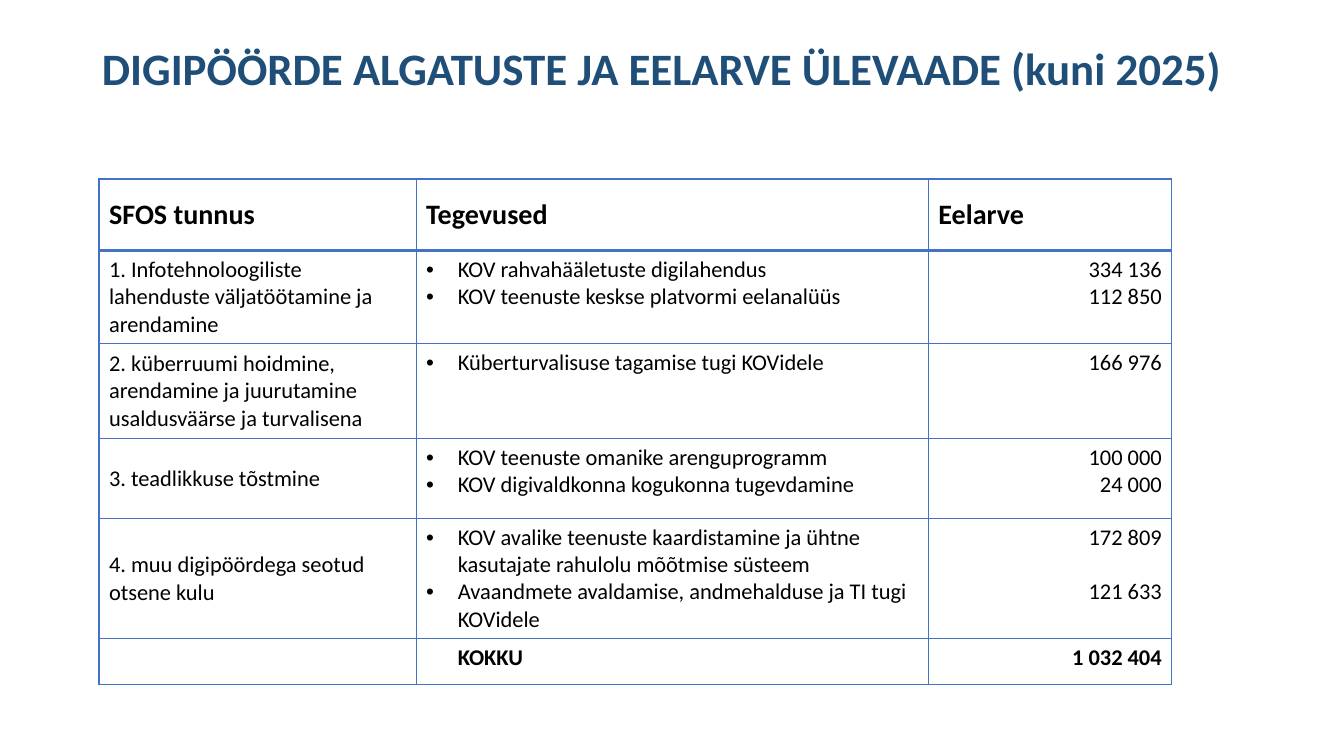
from lxml import etree
from pptx import Presentation
from pptx.dml.color import RGBColor
from pptx.enum.text import MSO_ANCHOR, PP_ALIGN
from pptx.oxml.ns import qn
from pptx.util import Pt

MIDDLE, TOP = MSO_ANCHOR.MIDDLE, MSO_ANCHOR.TOP
LEFT, RIGHT = PP_ALIGN.LEFT, PP_ALIGN.RIGHT

COLOURS = {"title": "1F4E79", "text": "000000", "border": "4472C4"}
COLUMN_WIDTHS = [226, 365, 173.5]
ROW_HEIGHTS = [51, 66.5, 67.5, 57, 85.5, 32.5]
HEADERS = ["SFOS tunnus", "Tegevused", "Eelarve"]
BUDGET_ROWS = [
    ("1. Infotehnoloogiliste lahenduste väljatöötamine ja arendamine",
     ["KOV rahvahääletuste digilahendus", "KOV teenuste keskse platvormi eelanalüüs"],
     ["334 136", "112 850"]),
    ("2. küberruumi hoidmine, arendamine ja juurutamine usaldusväärse ja turvalisena",
     ["Küberturvalisuse tagamise tugi KOVidele"],
     ["166 976"]),
    ("3. teadlikkuse tõstmine",
     ["KOV teenuste omanike arenguprogramm", "KOV digivaldkonna kogukonna tugevdamine"],
     ["100 000", "24 000"]),
    ("4. muu digipöördega seotud otsene kulu",
     ["KOV avalike teenuste kaardistamine ja ühtne kasutajate rahulolu mõõtmise süsteem",
      "Avaandmete avaldamise, andmehalduse ja TI tugi KOVidele"],
     ["172 809", "121 633"]),
]
TOTAL_ROW = 5
TWO_LINE_ROW = 4
LINE_HEIGHT = 19.5
INDENT = 22.5


class BudgetSlide:
    """Holds the style and the slide, and draws its elements."""

    def __init__(self, presentation, font="Calibri"):
        self.slide = presentation.slides.add_slide(presentation.slide_layouts[6])
        self.font = font

    def set_text(self, text_frame, lines, size, bold=False, colour="text", align=LEFT):
        text_frame.text = "\n".join(lines)
        for paragraph in text_frame.paragraphs:
            paragraph.alignment = align
            for run in paragraph.runs:
                run.font.name = self.font
                run.font.size = Pt(size)
                run.font.bold = bold
                run.font.color.rgb = RGBColor.from_string(COLOURS[colour])

    def title(self, text, left, top, width, height):
        text_frame = self.slide.shapes.add_textbox(
            Pt(left), Pt(top), Pt(width), Pt(height)).text_frame
        text_frame.word_wrap = True
        text_frame.vertical_anchor = MIDDLE
        self.set_text(text_frame, [text], 32, True, "title")
        text_frame.paragraphs[0].line_spacing = 0.9

    def table(self, left, top, widths, heights):
        table = self.slide.shapes.add_table(
            len(heights), len(widths), Pt(left), Pt(top),
            Pt(sum(widths)), Pt(sum(heights))).table
        table.first_row = table.horz_banding = False
        for column, width in zip(table.columns, widths):
            column.width = Pt(width)
        for row, height in zip(table.rows, heights):
            row.height = Pt(height)
        for index, row in enumerate(table.rows):
            for cell in row.cells:
                cell.fill.background()
                self.borders(cell, 2 if index == 1 else 1, 2 if index == 0 else 1)
        return table

    def borders(self, cell, top, bottom):
        properties = cell._tc.get_or_add_tcPr()
        sides = {"a:lnL": 1, "a:lnR": 1, "a:lnT": top, "a:lnB": bottom}
        for position, (side, width) in enumerate(sides.items()):
            line = etree.Element(qn(side), w=str(Pt(width)))
            fill = etree.SubElement(line, qn("a:solidFill"))
            etree.SubElement(fill, qn("a:srgbClr"), val=COLOURS["border"])
            properties.insert(position, line)

    def cell(self, cell, lines, size=16, bold=False, align=LEFT, anchor=TOP):
        cell.vertical_anchor = anchor
        self.set_text(cell.text_frame, lines, size, bold, align=align)

    def indent(self, cell, bullet=True):
        for paragraph in cell.text_frame.paragraphs:
            properties = paragraph._p.get_or_add_pPr()
            properties.set("marL", str(Pt(INDENT)))
            if bullet:
                properties.set("indent", str(-Pt(INDENT)))
                etree.SubElement(properties, qn("a:buFont"), typeface="Arial")
                etree.SubElement(properties, qn("a:buChar"), char="•")


def main():
    presentation = Presentation()
    presentation.slide_width, presentation.slide_height = Pt(957.6), Pt(538.56)
    slide = BudgetSlide(presentation)
    slide.title("DIGIPÖÖRDE ALGATUSTE JA EELARVE ÜLEVAADE (kuni 2025)", 65.5, 13, 826, 75)

    table = slide.table(70.5, 127.5, COLUMN_WIDTHS, ROW_HEIGHTS)
    for column, header in enumerate(HEADERS):
        slide.cell(table.cell(0, column), [header], 20, True, anchor=MIDDLE)
    for row, (code, activities, amounts) in enumerate(BUDGET_ROWS, start=1):
        slide.cell(table.cell(row, 0), [code], anchor=MIDDLE)
        slide.cell(table.cell(row, 1), activities)
        slide.indent(table.cell(row, 1))
        slide.cell(table.cell(row, 2), amounts, align=RIGHT)
    last_amount = table.cell(TWO_LINE_ROW, 2).text_frame.paragraphs[1]
    last_amount.space_before = Pt(LINE_HEIGHT)

    slide.cell(table.cell(TOTAL_ROW, 1), ["KOKKU"], bold=True)
    slide.indent(table.cell(TOTAL_ROW, 1), bullet=False)
    slide.cell(table.cell(TOTAL_ROW, 2), ["1 032 404"], bold=True, align=RIGHT)
    presentation.save("out.pptx")


if __name__ == "__main__":
    main()
